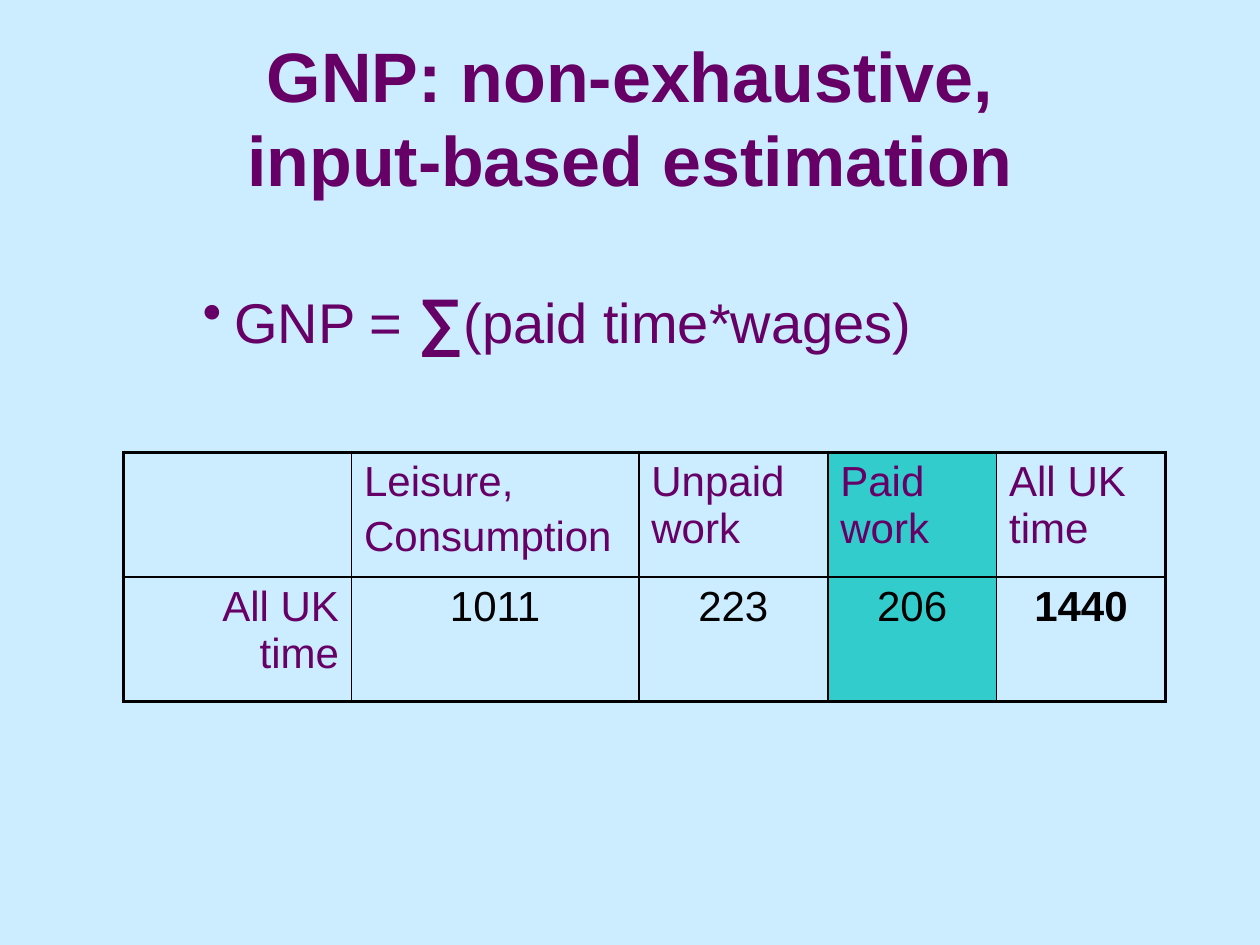
from lxml import etree
from pptx import Presentation
from pptx import util as u
from pptx.dml.color import RGBColor
from pptx.enum import text
from pptx.oxml import ns

COLORS = {"sky": "CCECFF", "plum": "660066", "teal": "33CCCC", "ink": "000000"}
COLS, ROWS = 100, 75  # grid over the slide
LEFT, MID, RIGHT = text.PP_ALIGN.LEFT, text.PP_ALIGN.CENTER, text.PP_ALIGN.RIGHT


def color(name):
    return RGBColor.from_string(COLORS[name])


class Deck:
    font = "Arial"

    def __init__(self):
        self.prs = Presentation()
        self.prs.slide_width, self.prs.slide_height = u.Inches(10), u.Inches(7.5)
        self.slide = self.prs.slides.add_slide(self.prs.slide_layouts[6])
        fill = self.slide.background.fill
        fill.solid()
        fill.fore_color.rgb = color("sky")

    def grid(self, x, y, w, h):
        dx, dy = self.prs.slide_width / COLS, self.prs.slide_height / ROWS
        return [round(n) for n in (x * dx, y * dy, w * dx, h * dy)]

    def style(self, font, size, ink="plum", bold=False):
        font.name, font.size, font.bold = self.font, u.Pt(size), bold
        font.color.rgb = color(ink)

    def box(self, *area, anchor=text.MSO_ANCHOR.TOP):
        frame = self.slide.shapes.add_textbox(*self.grid(*area)).text_frame
        frame.word_wrap = True
        frame.vertical_anchor = anchor
        return frame.paragraphs[0]

    def title(self, words, *area):
        para = self.box(*area, anchor=text.MSO_ANCHOR.MIDDLE)
        para.text, para.alignment = words, MID
        self.style(para.font, 40, bold=True)

    def bullet(self, parts, *area):
        para = self.box(*area)
        para.level = 2
        props = para._p.get_or_add_pPr()
        props.set("marL", str(u.Inches(1.25)))
        props.set("indent", str(u.Inches(-0.25)))
        etree.SubElement(props, ns.qn("a:buChar"), char="•")
        self.style(para.font, 32)
        for words, size, bold in parts:
            run = para.add_run()
            run.text = words
            self.style(run.font, size, bold=bold)

    def table(self, rows, widths, high, x, y):
        area = self.grid(x, y, sum(widths), high * len(rows))
        table = self.slide.shapes.add_table(len(rows), len(widths), *area).table
        table.first_row = table.horz_banding = False
        for col, wide in zip(table.columns, widths):
            col.width = self.grid(0, 0, wide, 0)[2]
        for r, row in enumerate(rows):
            table.rows[r].height = self.grid(0, 0, 0, high)[3]
            for c, item in enumerate(row):
                edges = {"L": c == 0, "R": c == len(row) - 1,
                         "T": r == 0, "B": r == len(rows) - 1}
                self.cell(table.cell(r, c), edges, *item)

    def cell(self, cell, edges, words, align=LEFT, ink="plum", bold=False, fill=None):
        if fill:
            cell.fill.solid()
            cell.fill.fore_color.rgb = color(fill)
        else:
            cell.fill.background()
        cell.text = words
        for i, para in enumerate(cell.text_frame.paragraphs):
            para.alignment = align
            para.space_before = u.Pt(4.8 if i else 0)
            self.style(para.font, 24, ink, bold)
        # Borders: thick around the table, thin inside
        props = cell._tc.get_or_add_tcPr()
        for i, (side, outer) in enumerate(edges.items()):
            line = etree.Element(ns.qn("a:ln" + side), w=str(u.Pt(2.25 if outer else 1)))
            solid = etree.SubElement(line, ns.qn("a:solidFill"))
            etree.SubElement(solid, ns.qn("a:srgbClr"), val=COLORS["ink"])
            props.insert(i, line)


def main():
    deck = Deck()

    # Heading
    deck.title("GNP: non-exhaustive,\vinput-based estimation", 5, 3, 90, 12.5)

    # Formula
    deck.bullet([("GNP = ", 32, False), ("∑", 36, True),
                 ("(paid time*wages)", 32, False)], 5.1, 21.8, 93, 49.5)

    # Table
    head = [("",), ("Leisure,\nConsumption",), ("Unpaid work",),
            ("Paid work", LEFT, "plum", False, "teal"), ("All UK time",)]
    data = [("All UK time", RIGHT), ("1011", MID, "ink"), ("223", MID, "ink"),
            ("206", MID, "ink", False, "teal"), ("1440", MID, "ink", True)]
    deck.table([head, data], [18.1, 22.8, 15, 13.4, 13.4], 9.9, 9.8, 35.9)

    deck.prs.save("out.pptx")


if __name__ == "__main__":
    main()
